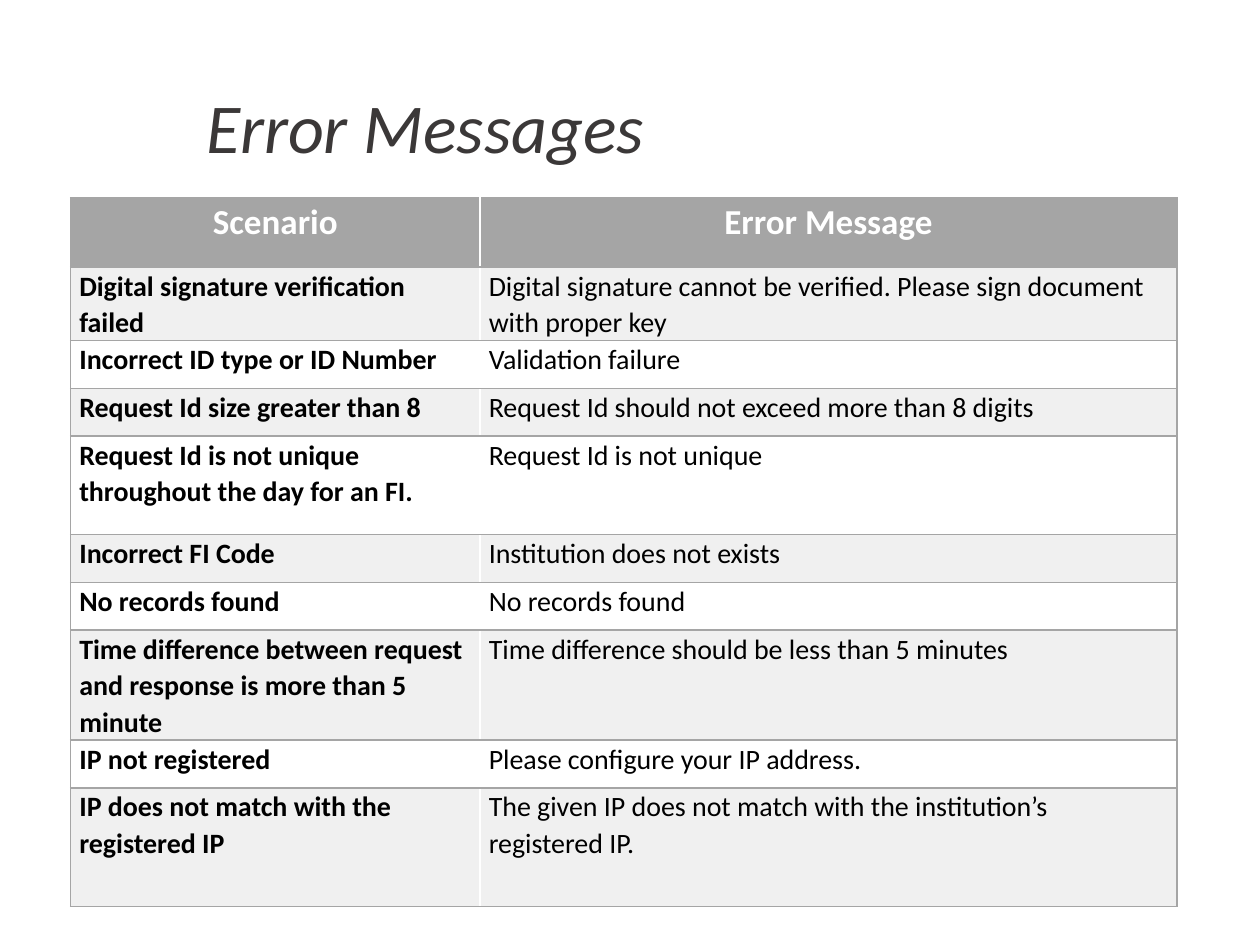
import pptx
import pptx.dml.color
import pptx.enum.text
import pptx.oxml
import pptx.oxml.ns
import pptx.util

Inches = pptx.util.Inches
Pt = pptx.util.Pt
ALIGN = pptx.enum.text.PP_ALIGN

COLUMN_WIDTHS = [3.25, 5.53]
HEADINGS = ["Scenario", "Error Message"]
HEADING_HEIGHT = 0.55
ERRORS = [
    (0.58, "Digital signature verification failed",
     "Digital signature cannot be verified. Please sign document with proper key"),
    (0.38, "Incorrect ID type or ID Number", "Validation failure"),
    (0.38, "Request Id size greater than 8", "Request Id should not exceed more than 8 digits"),
    (0.78, "Request Id is not unique throughout the day for an FI.", "Request Id is not unique"),
    (0.38, "Incorrect FI Code", "Institution does not exists"),
    (0.38, "No records found", "No records found"),
    (0.87, "Time difference between request and response is more than 5 minute",
     "Time difference should be less than 5 minutes"),
    (0.38, "IP not registered", "Please configure your IP address."),
    (0.94, "IP does not match with the registered IP",
     "The given IP does not match with the institution’s registered IP."),
]


def rgb(value):
    return pptx.dml.color.RGBColor.from_string(value)


def apply(target, values):
    for key, value in values.items():
        setattr(target, key, value)


class ErrorSlide:
    typeface = "Calibri"
    grey = "A5A5A5"
    bands = ("F0F0F0", "FFFFFF")
    margins = {"margin_left": Inches(0.07), "margin_right": Inches(0.07),
               "margin_top": 0, "margin_bottom": 0}

    def __init__(self, deck):
        self.slide = deck.slides.add_slide(deck.slide_layouts[5])

    def set_text(self, paragraph, text, color, layout, **font):
        paragraph.text = text
        apply(paragraph, layout)
        apply(paragraph.font, {"name": self.typeface, **font})
        paragraph.font.color.rgb = rgb(color)

    def title(self, text, left, top, width, height):
        heading = self.slide.shapes.title
        apply(heading, {"left": Inches(left), "top": Inches(top),
                        "width": Inches(width), "height": Inches(height)})
        heading.text_frame.vertical_anchor = pptx.enum.text.MSO_ANCHOR.MIDDLE
        self.set_text(heading.text_frame.paragraphs[0], text, "3B3838",
                      {"alignment": ALIGN.LEFT, "line_spacing": 0.9},
                      size=Pt(40), italic=True)

    def borders(self, cell, sides):
        properties = cell._tc.get_or_add_tcPr()
        for side in sides:
            properties.append(pptx.oxml.parse_xml(
                f'<a:ln{side} {pptx.oxml.ns.nsdecls("a")} w="12700"><a:solidFill>'
                f'<a:srgbClr val="{self.grey}"/></a:solidFill></a:ln{side}>'))

    def cell(self, cell, text, fill, color, sides, alignment, **font):
        apply(cell, self.margins)
        self.borders(cell, sides)
        cell.fill.solid()
        cell.fill.fore_color.rgb = rgb(fill)
        self.set_text(cell.text_frame.paragraphs[0], text, color,
                      {"alignment": alignment, "line_spacing": 1.07}, **font)

    def table(self, left, top, widths, headings, errors):
        heights = [HEADING_HEIGHT] + [height for height, *_ in errors]
        grid = self.slide.shapes.add_table(
            len(heights), len(widths), Inches(left), Inches(top),
            Inches(sum(widths)), Inches(sum(heights))).table
        for column, width in zip(grid.columns, widths):
            column.width = Inches(width)
        for row, height in zip(grid.rows, heights):
            row.height = Inches(height)
        for column, heading in enumerate(headings):
            sides = "RTB" if column else "LTB"
            self.cell(grid.cell(0, column), heading, self.grey, "FFFFFF", sides,
                      ALIGN.CENTER, size=Pt(20), bold=True)
            for row, error in enumerate(errors, 1):
                self.cell(grid.cell(row, column), error[column + 1],
                          self.bands[(row - 1) % 2], "000000", sides,
                          ALIGN.LEFT, size=Pt(16), bold=column == 0)


def main():
    deck = pptx.Presentation()
    apply(deck, {"slide_width": Inches(10), "slide_height": Inches(7.5)})
    page = ErrorSlide(deck)
    page.title("Error Messages", 1.54, 0.67, 7.97, 0.74)
    page.table(0.56, 1.57, COLUMN_WIDTHS, HEADINGS, ERRORS)
    deck.save("out.pptx")


if __name__ == "__main__":
    main()
